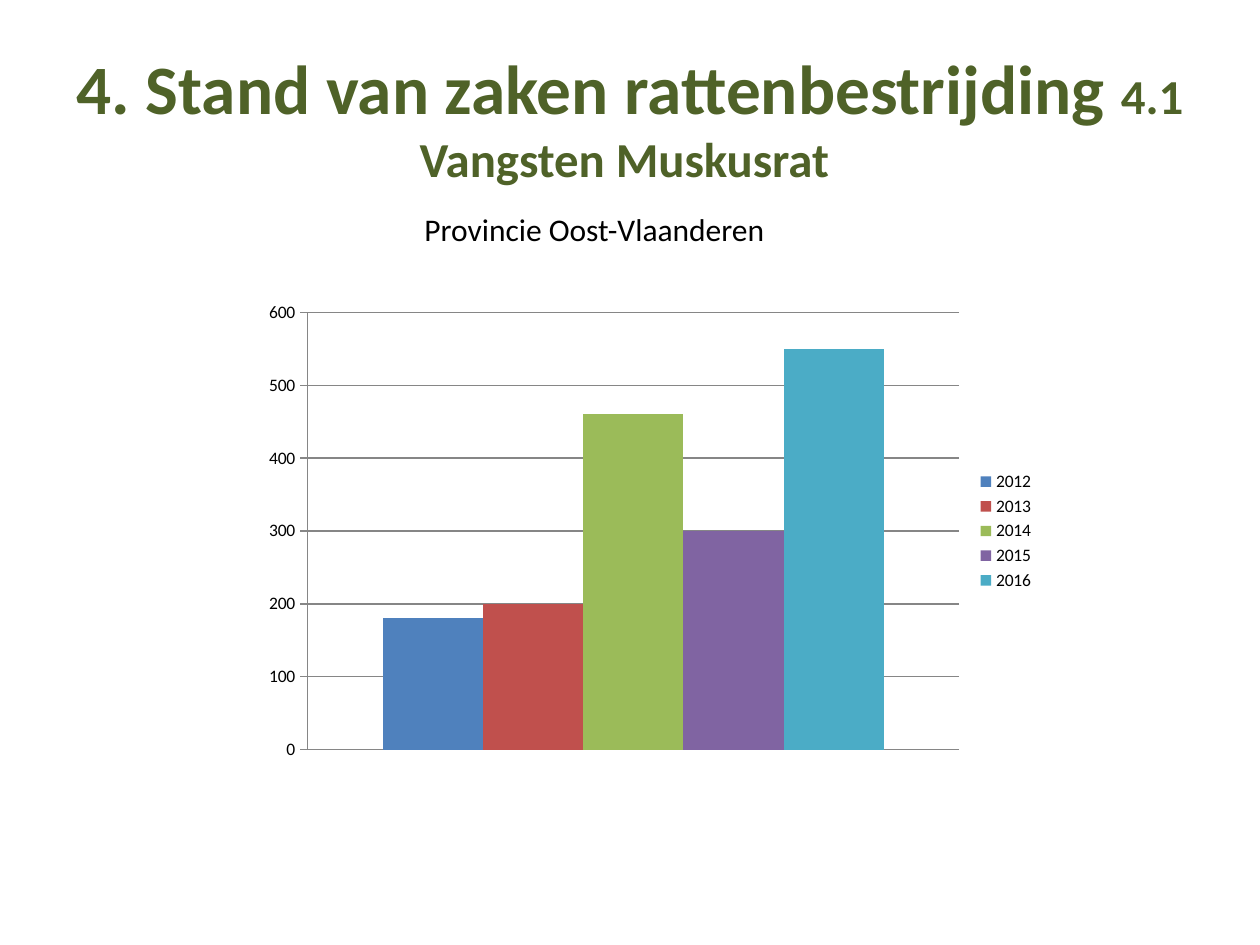
"""Build a slide with the yearly muskrat catches as a clustered column chart."""
from dataclasses import dataclass

from pptx import Presentation
from pptx.chart.data import CategoryChartData
from pptx.dml.color import RGBColor
from pptx.enum.chart import XL_CHART_TYPE, XL_LEGEND_POSITION, XL_TICK_MARK
from pptx.enum.text import MSO_ANCHOR, PP_ALIGN
from pptx.util import Inches, Pt

WIDTH, HEIGHT = Inches(10), Inches(7.5)
FONT = "Calibri"
COLORS = {
    "title": "4F6228",
    "text": "000000",
    "line": "868686",
    "2012": "4F81BD",
    "2013": "C0504D",
    "2014": "9BBB59",
    "2015": "8064A2",
    "2016": "4BACC6",
}


@dataclass(frozen=True)
class Area:
    """A rectangle in shares of the slide's size."""

    left: float
    top: float
    width: float
    height: float

    def lengths(self) -> tuple[int, int, int, int]:
        """Return left, top, width and height in slide units."""
        return (
            int(self.left * WIDTH),
            int(self.top * HEIGHT),
            int(self.width * WIDTH),
            int(self.height * HEIGHT),
        )


@dataclass(frozen=True)
class Catch:
    """The number of animals caught in one year."""

    year: str
    count: int


CATCHES = [
    Catch("2012", 180),
    Catch("2013", 200),
    Catch("2014", 460),
    Catch("2015", 300),
    Catch("2016", 550),
]


def color(name: str) -> RGBColor:
    """Look up a named colour."""
    return RGBColor.from_string(COLORS[name])


def style_font(font, size: float, name: str = "text", bold: bool = False) -> None:
    """Set typeface, size, colour and weight."""
    font.name = FONT
    font.size = Pt(size)
    font.bold = bold
    font.color.rgb = color(name)


def add_text(page, area: Area, parts: list[tuple[str, float]], *, fill: str = "text",
             bold: bool = False, wrap: bool = True, align=PP_ALIGN.LEFT,
             anchor=MSO_ANCHOR.TOP) -> None:
    """Add a one-paragraph text box from pairs of text and size."""
    frame = page.shapes.add_textbox(*area.lengths()).text_frame
    frame.word_wrap = wrap
    frame.vertical_anchor = anchor
    para = frame.paragraphs[0]
    para.alignment = align
    for text, size in parts:
        span = para.add_run()
        span.text = text
        style_font(span.font, size, fill, bold)


def add_catch_chart(page, area: Area, catches: list[Catch]) -> None:
    """Add the column chart with one series for each year."""
    data = CategoryChartData()
    data.categories = ["1"]
    for catch in catches:
        data.add_series(catch.year, [catch.count])
    chart = page.shapes.add_chart(
        XL_CHART_TYPE.COLUMN_CLUSTERED, *area.lengths(), data).chart
    style_font(chart.font, 10)
    chart.has_title = False
    chart.has_legend = True
    chart.legend.position = XL_LEGEND_POSITION.RIGHT
    chart.legend.include_in_layout = False
    chart.category_axis.visible = False

    axis = chart.value_axis
    axis.minimum_scale, axis.maximum_scale, axis.major_unit = 0, 600, 100
    axis.major_tick_mark = XL_TICK_MARK.OUTSIDE
    axis.has_major_gridlines = True
    for line in (axis.format.line, axis.major_gridlines.format.line):
        line.color.rgb = color("line")
        line.width = Pt(0.75)

    plot = chart.plots[0]
    plot.gap_width = 150
    plot.overlap = 0
    plot.vary_by_categories = False
    for series in plot.series:
        series.format.fill.solid()
        series.format.fill.fore_color.rgb = color(series.name)


def main() -> None:
    """Build and save the deck."""
    deck = Presentation()
    deck.slide_width, deck.slide_height = WIDTH, HEIGHT
    page = deck.slides.add_slide(deck.slide_layouts[6])
    add_text(page, Area(0.05, 0.04, 0.9, 1 / 6),
             [("4. Stand van zaken rattenbestrijding ", 39.6),
              ("4.1 Vangsten Muskusrat ", 27.9)],
             fill="title", bold=True, align=PP_ALIGN.CENTER, anchor=MSO_ANCHOR.MIDDLE)
    add_text(page, Area(0.327, 0.216, 0.315, 0.054),
             [("Provincie Oost-Vlaanderen", 18)], wrap=False)
    add_catch_chart(page, Area(0.201, 0.31, 0.63, 0.504), CATCHES)
    deck.save("out.pptx")


if __name__ == "__main__":
    main()
